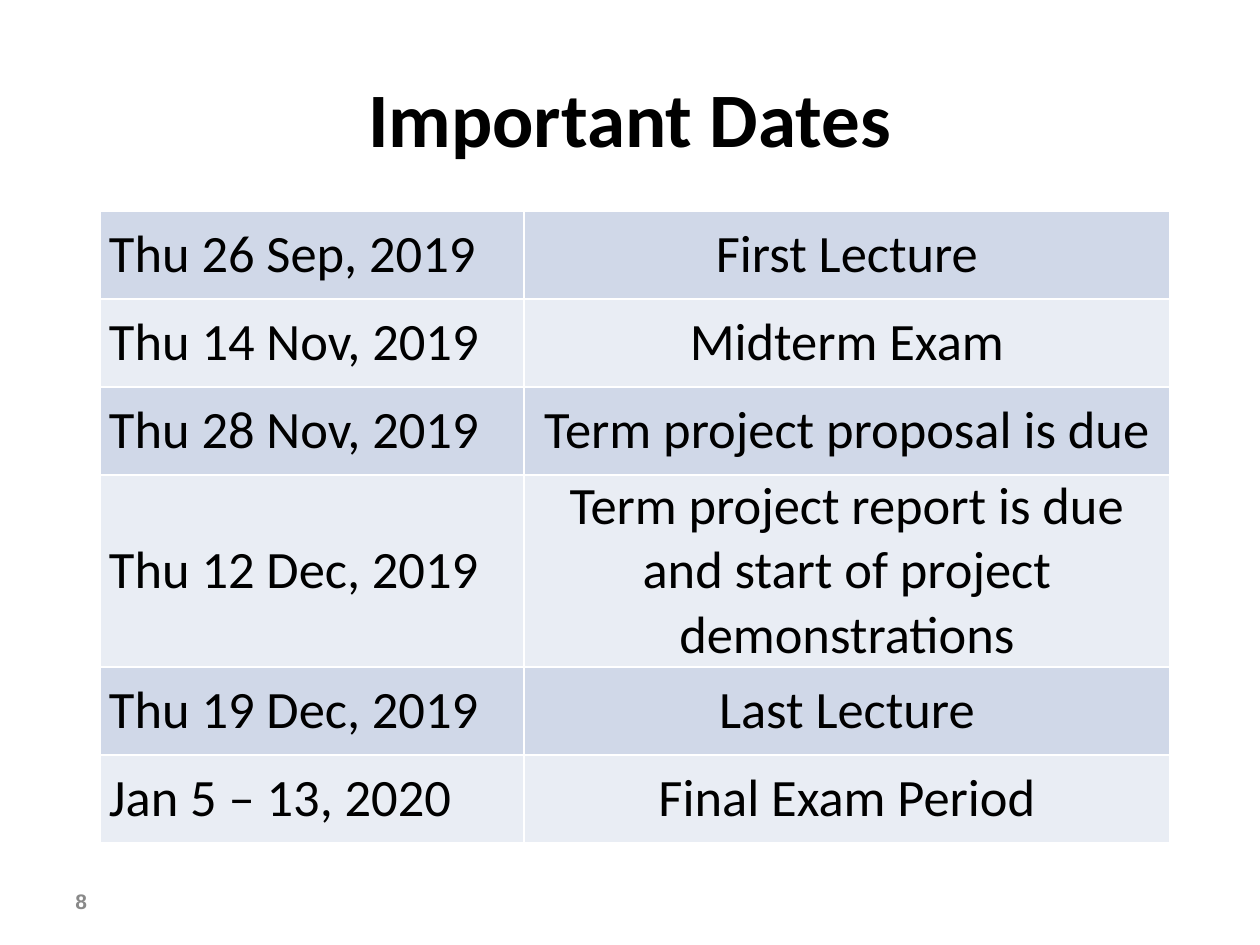
from lxml.etree import SubElement
from pptx import Presentation
from pptx.dml.color import RGBColor
from pptx.enum.text import MSO_ANCHOR, PP_ALIGN
from pptx.oxml.ns import qn
from pptx.util import Pt

PX = 914400 / 126
COLORS = {"text": "000000", "number": "898989", "border": "FFFFFF",
          "dark_band": "D0D8E8", "light_band": "E9EDF4"}
DATES = [
    ("Thu 26 Sep, 2019", "First Lecture"),
    ("Thu 14 Nov, 2019", "Midterm Exam"),
    ("Thu 28 Nov, 2019", "Term project proposal is due"),
    ("Thu 12 Dec, 2019",
     "Term project report is due and start of project demonstrations"),
    ("Thu 19 Dec, 2019", "Last Lecture"),
    ("Jan 5 – 13, 2020", "Final Exam Period"),
]
COLUMN_WIDTHS = (424, 646)
ROW_HEIGHT, TALL_ROW_HEIGHT, TALL_ROW = 88, 192, 3


def px(length):
    return round(length * PX)


def style(para, size, font, color, align, bold):
    para.alignment = align
    para.font.size = Pt(size)
    para.font.name = font
    para.font.bold = bold
    para.font.color.rgb = RGBColor.from_string(COLORS[color])


def add_text(page, box, text, *look):
    frame = page.shapes.add_textbox(*map(px, box)).text_frame
    frame.word_wrap = True
    frame.vertical_anchor = MSO_ANCHOR.MIDDLE
    frame.text = text
    style(frame.paragraphs[0], *look)


def add_borders(cell):
    properties = cell._tc.get_or_add_tcPr()
    for index, side in enumerate(("a:lnL", "a:lnR", "a:lnT", "a:lnB")):
        line = SubElement(properties, qn(side), w=str(Pt(1)))
        fill = SubElement(line, qn("a:solidFill"))
        SubElement(fill, qn("a:srgbClr"), val=COLORS["border"])
        properties.insert(index, line)  # borders come before the cell fill


def fill_cell(cell, text, band, align):
    cell.text = text
    cell.vertical_anchor = MSO_ANCHOR.MIDDLE
    cell.margin_left = cell.margin_right = px(9)
    cell.margin_top = cell.margin_bottom = 0
    cell.fill.solid()
    cell.fill.fore_color.rgb = RGBColor.from_string(COLORS[band])
    style(cell.text_frame.paragraphs[0], 30, "Calibri", "text", align, False)
    add_borders(cell)


def add_dates_table(page, box):
    table = page.shapes.add_table(len(DATES), 2, *map(px, box)).table
    table.first_row = False
    for column, width in zip(table.columns, COLUMN_WIDTHS):
        column.width = px(width)
    for index, entry in enumerate(DATES):
        table.rows[index].height = px(
            TALL_ROW_HEIGHT if index == TALL_ROW else ROW_HEIGHT)
        band = "light_band" if index % 2 else "dark_band"
        for column, align in enumerate((PP_ALIGN.LEFT, PP_ALIGN.CENTER)):
            fill_cell(table.cell(index, column), entry[column], band, align)


def build_dates_slide(deck):
    page = deck.slides.add_slide(deck.slide_layouts[6])
    # Title
    add_text(page, (63, 38, 1134, 157), "Important Dates",
             44, "Calibri", "text", PP_ALIGN.CENTER, True)
    # Dates table
    add_dates_table(page, (100, 211, 1070, 632))
    # Slide number
    add_text(page, (63, 876, 294, 50), "8",
             12, "Arial", "number", PP_ALIGN.LEFT, True)


def main():
    deck = Presentation()
    deck.slide_width, deck.slide_height = px(1260), px(945)
    build_dates_slide(deck)
    deck.save("out.pptx")


if __name__ == "__main__":
    main()
